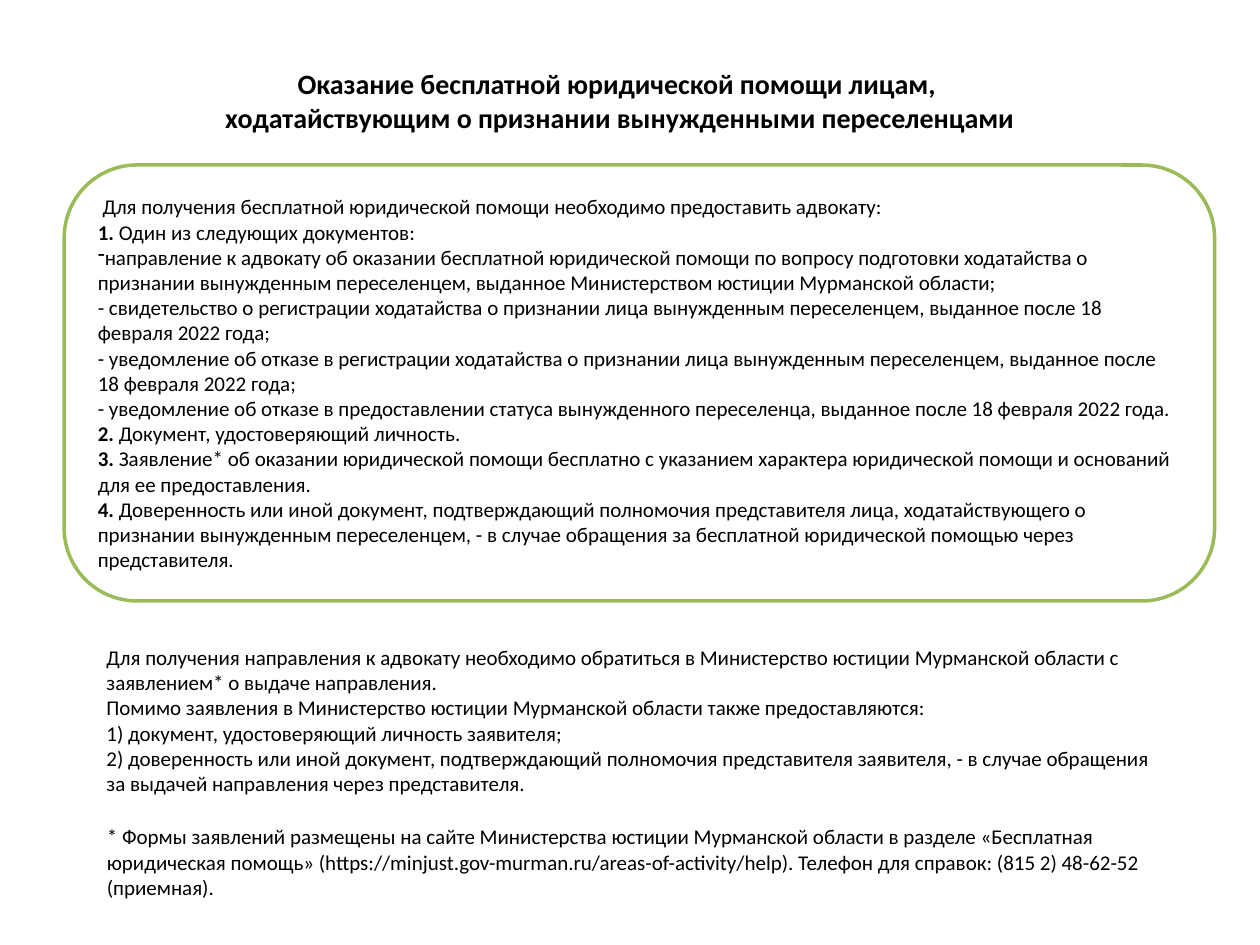
"""Build a slide on free legal aid for people seeking resettler status."""
import pptx
import pptx.util
import pptx.dml.color
import pptx.enum.shapes
import pptx.enum.text
import pptx.oxml
import pptx.oxml.ns

Inches = pptx.util.Inches
Pt = pptx.util.Pt
ALIGN = pptx.enum.text.PP_ALIGN
ANCHOR = pptx.enum.text.MSO_ANCHOR
ROUND = pptx.enum.shapes.MSO_SHAPE.ROUNDED_RECTANGLE

COLORS = {"text": "000000", "frame": "9BBB59"}
FONT = "Calibri"

TITLE = ("Оказание бесплатной юридической помощи лицам, \v"
         "ходатайствующим о признании вынужденными переселенцами")

# Each entry holds a bold lead, the text and a bullet sign.
PAPERS = [
    ("", " Для получения бесплатной юридической помощи необходимо предоставить адвокату:", ""),
    ("1. ", "Один из следующих документов:", ""),
    ("", "направление к адвокату об оказании бесплатной юридической помощи по вопросу "
         "подготовки ходатайства о признании вынужденным переселенцем, выданное "
         "Министерством юстиции Мурманской области;", "-"),
    ("", "- свидетельство о регистрации ходатайства о признании лица вынужденным "
         "переселенцем, выданное после 18 февраля 2022 года;", ""),
    ("", "- уведомление об отказе в регистрации ходатайства о признании лица вынужденным "
         "переселенцем, выданное после 18 февраля 2022 года;", ""),
    ("", "- уведомление об отказе в предоставлении статуса вынужденного переселенца, "
         "выданное после 18 февраля 2022 года.", ""),
    ("2.", " Документ, удостоверяющий личность.", ""),
    ("3. ", "Заявление* об оказании юридической помощи бесплатно с указанием характера "
            "юридической помощи и оснований для ее предоставления.", ""),
    ("4.", " Доверенность или иной документ, подтверждающий полномочия представителя лица, "
           "ходатайствующего о признании вынужденным переселенцем, - в случае обращения за "
           "бесплатной юридической помощью через представителя.", ""),
]
STEPS = [
    ("", "Для получения направления к адвокату необходимо обратиться в Министерство юстиции "
         "Мурманской области с заявлением* о выдаче направления.", ""),
    ("", "Помимо заявления в Министерство юстиции Мурманской области также предоставляются:", ""),
    ("", "1) документ, удостоверяющий личность заявителя;", ""),
    ("", "2) доверенность или иной документ, подтверждающий полномочия представителя "
         "заявителя, - в случае обращения за выдачей направления через представителя.", ""),
]
NOTE = [
    ("", "* Формы заявлений размещены на сайте Министерства юстиции Мурманской области в "
         "разделе «Бесплатная юридическая помощь» "
         "(https://minjust.gov-murman.ru/areas-of-activity/help). "
         "Телефон для справок: (815 2) 48-62-52 (приемная).", ""),
]

PLACES = {
    "title": (0.67, 0.44, 8.5, 0.71),
    "papers": (0.51, 1.31, 9.13, 3.46),
    "steps": (0.67, 4.93, 8.74, 1.57),
    "note": (0.75, 6.49, 8.74, 1.01),
}


def place(name):
    return [Inches(x) for x in PLACES[name]]


def color(name):
    return pptx.dml.color.RGBColor.from_string(COLORS[name])


def style(run, size=12, bold=False):
    font = run.font
    font.name, font.size, font.bold = FONT, Pt(size), bold
    font.color.rgb = color("text")


def bullet(para, sign):
    props = para._p.get_or_add_pPr()
    props.set("marL", "0")
    props.set("indent", "0")
    mark = pptx.oxml.parse_xml(
        f'<a:buChar {pptx.oxml.ns.nsdecls("a")} char="{sign}"/>')
    props.append(mark)


def write(frame, items, anchor):
    frame.word_wrap = True
    frame.vertical_anchor = anchor
    for i, (lead, text, sign) in enumerate(items):
        para = frame.add_paragraph() if i else frame.paragraphs[0]
        para.alignment = ALIGN.LEFT
        if sign:
            bullet(para, sign)
        for part, bold in ((lead, True), (text, False)):
            if part:
                run = para.add_run()
                run.text = part
                style(run, bold=bold)


def panel(slide, name, items, line=None):
    box = slide.shapes.add_shape(ROUND, *place(name))
    box.shadow.inherit = False
    box.fill.background()
    if line:
        box.line.color.rgb = color(line)
        box.line.width = Pt(2)
    else:
        box.line.fill.background()
    write(box.text_frame, items, ANCHOR.MIDDLE)


def main():
    deck = pptx.Presentation()
    deck.slide_width, deck.slide_height = Inches(10), Inches(7.5)
    slide = deck.slides.add_slide(deck.slide_layouts[5])

    title = slide.shapes.title
    title.left, title.top, title.width, title.height = place("title")
    frame = title.text_frame
    frame.text = TITLE
    frame.vertical_anchor = ANCHOR.MIDDLE
    frame.paragraphs[0].alignment = ALIGN.CENTER
    for run in frame.paragraphs[0].runs:
        style(run, 16, True)

    panel(slide, "papers", PAPERS, "frame")
    panel(slide, "steps", STEPS)
    note = slide.shapes.add_textbox(*place("note"))
    write(note.text_frame, NOTE, ANCHOR.TOP)
    deck.save("out.pptx")


if __name__ == "__main__":
    main()
